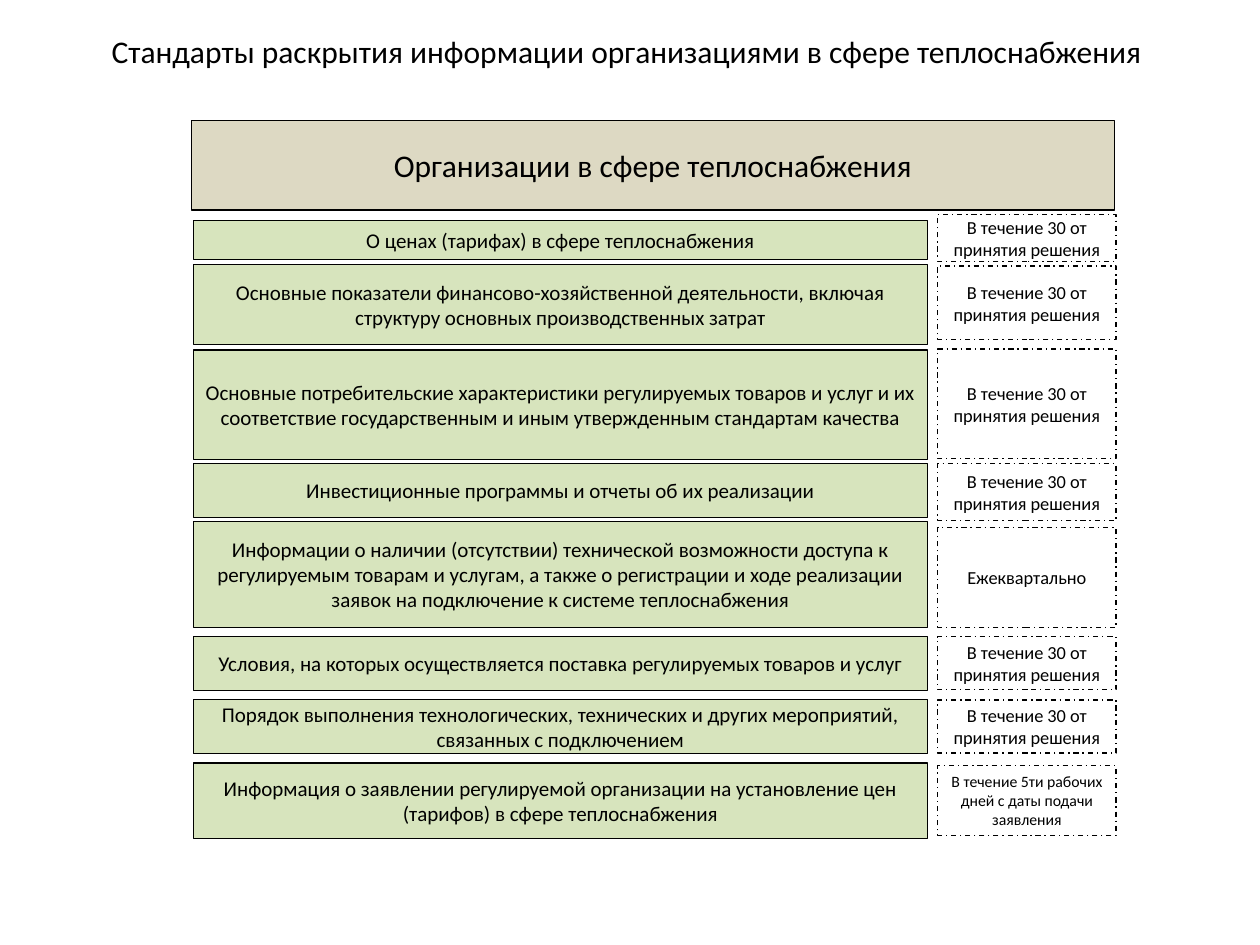
import dataclasses

import pptx
import pptx.dml.color
import pptx.enum.dml
import pptx.enum.shapes
import pptx.enum.text
import pptx.util

Pt = pptx.util.Pt
RGB = pptx.dml.color.RGBColor.from_string


@dataclasses.dataclass(frozen=True)
class Theme:
    font: str = "Calibri"
    ink: str = "000000"
    header: str = "DDD9C3"
    topic: str = "D7E4BD"
    deadline: str = "FFFFFF"
    title_size: float = 18
    topic_size: float = 12
    deadline_size: float = 10.5
    small_size: float = 9
    line: float = 0.75


theme = Theme()


def write(shape, text, size):
    tf = shape.text_frame
    tf.text = text
    font = tf.paragraphs[0].runs[0].font
    font.name = theme.font
    font.size = Pt(size)
    font.color.rgb = RGB(theme.ink)
    return tf


def add_box(left, top, width, height, fill, text, size):
    """Add an outlined rectangle with centred text."""
    sp = s.shapes.add_shape(pptx.enum.shapes.MSO_SHAPE.RECTANGLE,
                            Pt(left), Pt(top), Pt(width), Pt(height))
    sp.shadow.inherit = False
    sp.fill.solid()
    sp.fill.fore_color.rgb = RGB(fill)
    sp.line.color.rgb = RGB(theme.ink)
    sp.line.width = Pt(theme.line)
    tf = write(sp, text, size)
    tf.word_wrap = True
    tf.margin_top = tf.margin_bottom = Pt(0)
    tf.vertical_anchor = pptx.enum.text.MSO_ANCHOR.MIDDLE
    tf.paragraphs[0].alignment = pptx.enum.text.PP_ALIGN.CENTER
    return sp


prs = pptx.Presentation()
prs.slide_width, prs.slide_height = Pt(720), Pt(540)
s = prs.slides.add_slide(prs.slide_layouts[6])

title = s.shapes.add_textbox(Pt(56.7), Pt(15), Pt(606.4), Pt(29))
tf = write(title, "Стандарты раскрытия информации организациями в сфере теплоснабжения",
           theme.title_size)
tf.word_wrap = False
tf.auto_size = pptx.enum.text.MSO_AUTO_SIZE.SHAPE_TO_FIT_TEXT

add_box(109.4, 69, 527.4, 51, theme.header,
        "Организации в сфере теплоснабжения", theme.title_size)

TOPIC_LEFT, TOPIC_WIDTH = 110.4, 419.8
DEADLINE_LEFT, DEADLINE_WIDTH = 535.8, 102
MONTH = "В течение 30 от принятия решения"

# topic, its top and height, deadline, its top and height, deadline type size
rows = [
    ("О ценах (тарифах) в сфере теплоснабжения",
     126, 22.4, MONTH, 122.5, 27, theme.deadline_size),
    ("Основные показатели финансово-хозяйственной деятельности, включая "
     "структуру основных производственных затрат",
     151.3, 45.4, MONTH, 152, 42, theme.deadline_size),
    ("Основные потребительские характеристики регулируемых товаров и услуг и их "
     "соответствие государственным и иным утвержденным стандартам качества",
     200, 62.6, MONTH, 199.5, 62.6, theme.deadline_size),
    ("Инвестиционные программы и отчеты об их реализации",
     264.8, 31, MONTH, 265, 32.4, theme.deadline_size),
    ("Информации о наличии (отсутствии) технической возможности доступа к "
     "регулируемым товарам и услугам, а также о регистрации и ходе реализации "
     "заявок на подключение к системе теплоснабжения",
     298, 60.5, "Ежеквартально", 301.5, 57, theme.deadline_size),
    ("Условия, на которых осуществляется поставка регулируемых товаров и услуг",
     363.6, 31, MONTH, 363.8, 30.4, theme.deadline_size),
    ("Порядок выполнения технологических, технических и других мероприятий, "
     "связанных с подключением",
     399.8, 31, MONTH, 400, 30.4, theme.deadline_size),
    ("Информация о заявлении регулируемой организации на установление цен "
     "(тарифов) в сфере теплоснабжения",
     436, 43.2, "В течение 5ти рабочих дней с даты подачи заявления",
     437.6, 39.8, theme.small_size),
]

for topic, top, height, deadline, due_top, due_height, due_size in rows:
    add_box(TOPIC_LEFT, top, TOPIC_WIDTH, height, theme.topic, topic, theme.topic_size)
    sp = add_box(DEADLINE_LEFT, due_top, DEADLINE_WIDTH, due_height,
                 theme.deadline, deadline, due_size)
    sp.line.dash_style = pptx.enum.dml.MSO_LINE.DASH_DOT

prs.save("out.pptx")
